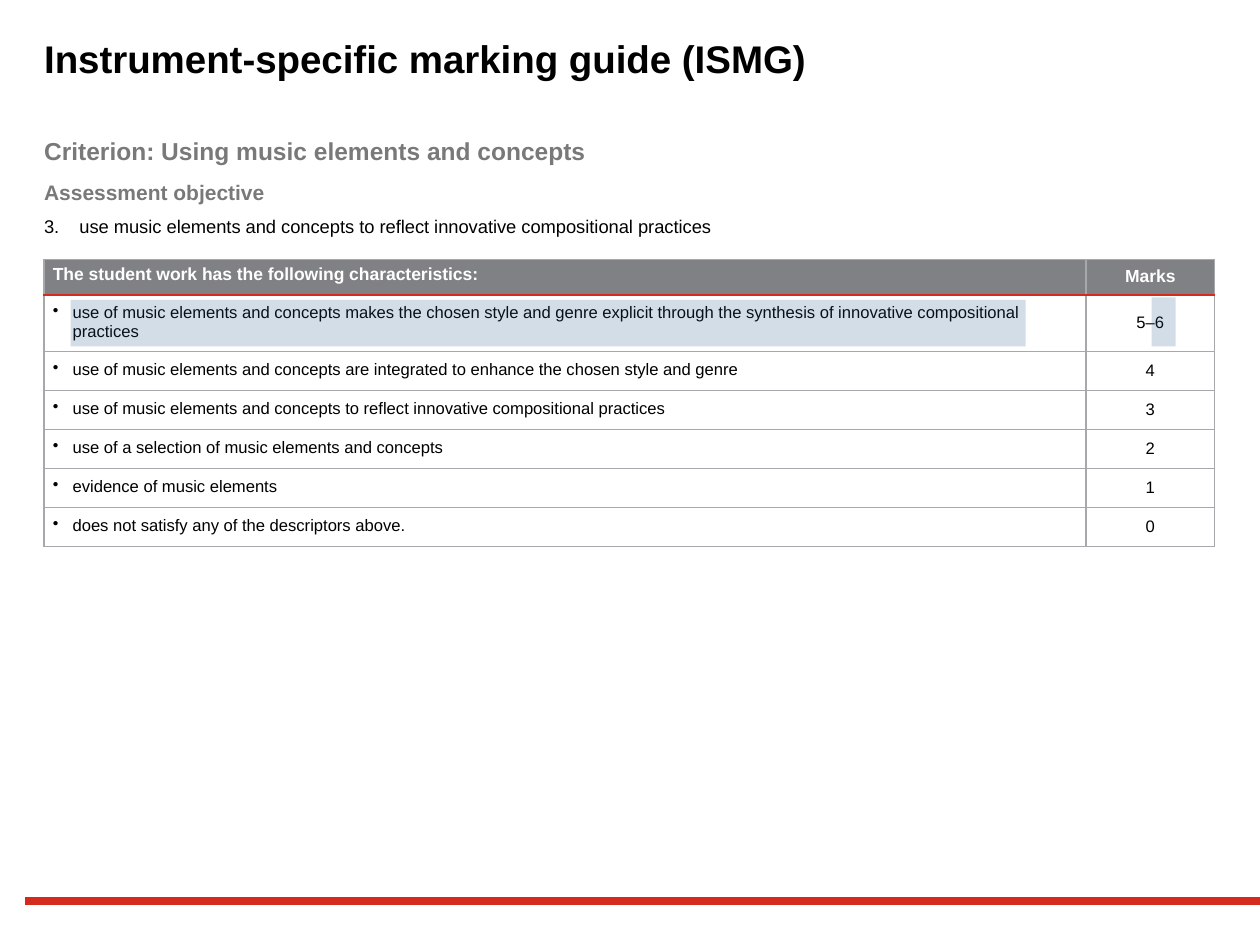
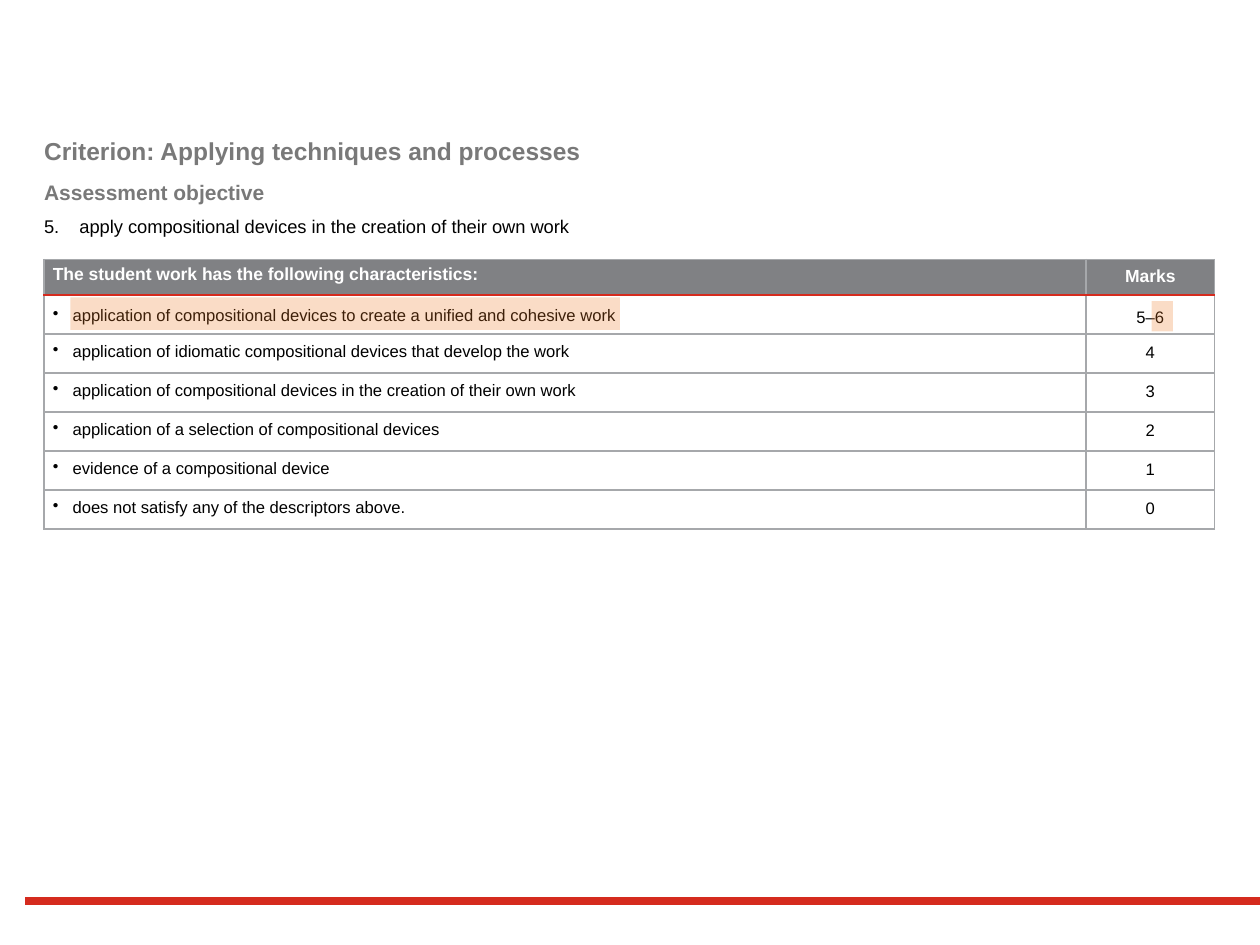
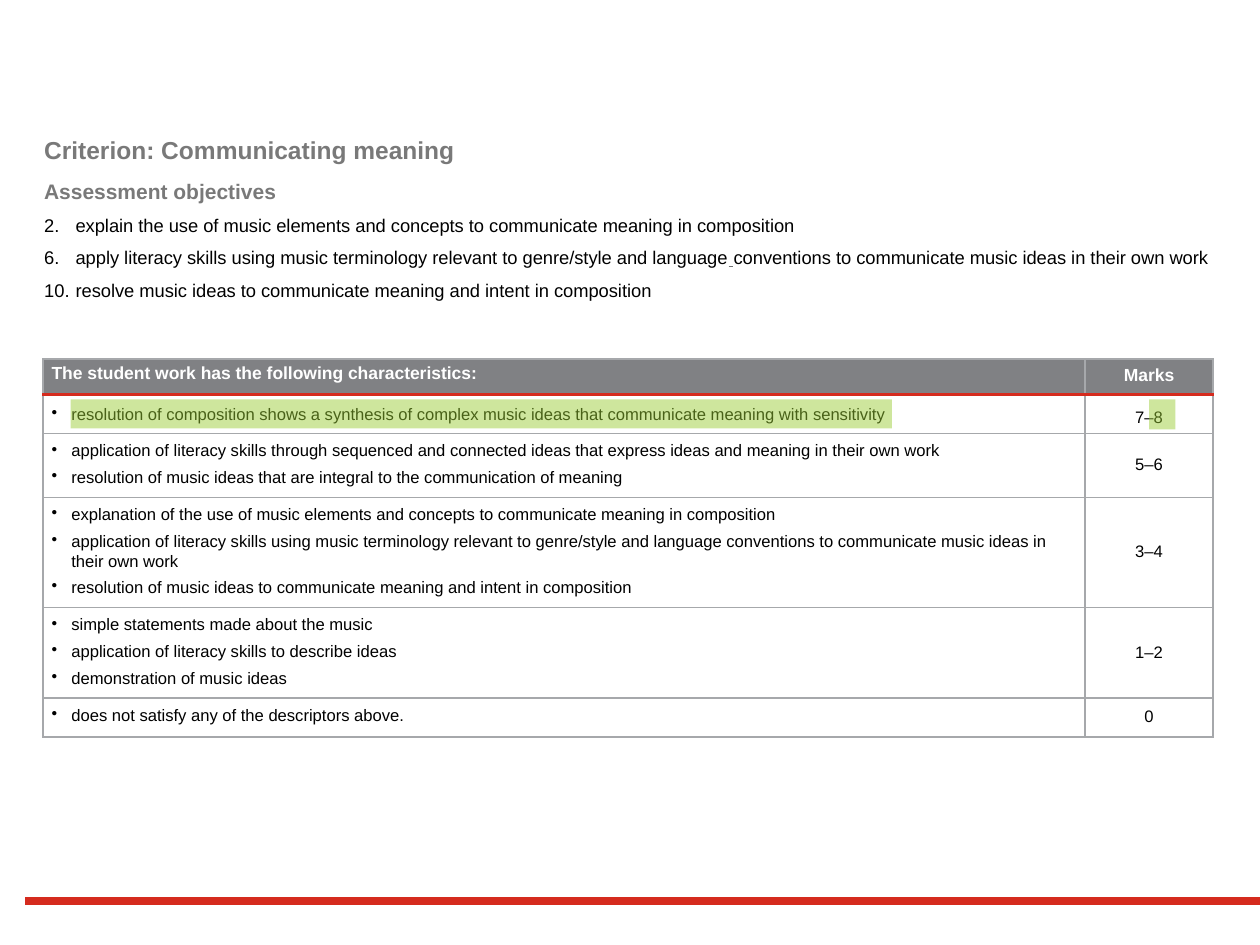
"""Build three slides of a music marking guide, one criterion per slide."""
from lxml import etree
from pptx import Presentation
from pptx import util as u
from pptx.dml import color
from pptx.enum import shapes, text
from pptx.oxml import ns

BLACK, WHITE, RED = "000000", "FFFFFF", "D52B1E"
HEADING, HEADER_FILL, BORDER = "797979", "808184", "A6A8AB"
LEFT, WIDTH = 25.2, 668.5
COLUMN_WIDTHS = (595.4, 73.4)
HEADER_HEIGHT, ROW_HEIGHT = 20.2, 22.3
HEADER_INSETS, ROW_INSETS, TIGHT_INSETS = (2.9, 4.3), (4.3, 5.8), (5.8, 2.9)
LAST_ROW = (["does not satisfy any of the descriptors above."], "0")

CRITERIA = [
    {
        "title": "Instrument-specific marking guide (ISMG)",
        "criterion": "Criterion: Using music elements and concepts",
        "heading": "Assessment objective",
        "objectives": [(None, ["3.\tuse music elements and concepts to reflect innovative compositional practices"])],
        "indent": 20.2,
        "body": (77.8, 67.7),
        "table": (25.2, 148.3),
        "first_insets": ROW_INSETS,
        "rows": [
            (["use of music elements and concepts makes the chosen style and genre explicit "
              "through the synthesis of innovative compositional practices"], "5–6"),
            (["use of music elements and concepts are integrated to enhance the chosen style and genre"], "4"),
            (["use of music elements and concepts to reflect innovative compositional practices"], "3"),
            (["use of a selection of music elements and concepts"], "2"),
            (["evidence of music elements"], "1"),
        ],
        "highlight": ("21578A", 20),
        "highlight_boxes": [(658.1, 169.9, 13.7, 28.1), (40.3, 171.4, 545.8, 26.6)],
    },
    {
        "title": None,
        "criterion": "Criterion: Applying techniques and processes",
        "heading": "Assessment objective",
        "objectives": [(None, ["5.\tapply compositional devices in the creation of their own work"])],
        "indent": 20.2,
        "body": (77.8, 107.3),
        "table": (25.2, 148.3),
        "first_insets": TIGHT_INSETS,
        "rows": [
            (["application of compositional devices to create a unified and cohesive work"], "5–6"),
            (["application of idiomatic compositional devices that develop the work"], "4"),
            (["application of compositional devices in the creation of their own work"], "3"),
            (["application of a selection of compositional devices"], "2"),
            (["evidence of a compositional device"], "1"),
        ],
        "highlight": ("ED7A23", 26),
        "highlight_boxes": [(658.1, 172.1, 12.2, 17.3), (40.3, 169.9, 313.9, 18.7)],
    },
    {
        "title": None,
        "criterion": "Criterion: Communicating meaning",
        "heading": "Assessment objectives",
        "objectives": [
            (2, ["explain the use of music elements and concepts to communicate meaning in composition"]),
            (6, ["apply literacy skills using music terminology relevant to genre/style and language", " ",
                 "conventions to communicate music ideas in their own work"]),
            (10, ["resolve music ideas to communicate meaning and intent in composition"]),
        ],
        "indent": 18,
        "body": (77, 118.8),
        "table": (24.5, 205.2),
        "first_insets": TIGHT_INSETS,
        "rows": [
            (["resolution of composition shows a synthesis of complex music ideas "
              "that communicate meaning with sensitivity"], "7–8"),
            (["application of literacy skills through sequenced and connected ideas "
              "that express ideas and meaning in their own work",
              "resolution of music ideas that are integral to the communication of meaning"], "5–6"),
            (["explanation of the use of music elements and concepts to communicate meaning in composition",
              "application of literacy skills using music terminology relevant to genre/style and language "
              "conventions to communicate music ideas in their own work",
              "resolution of music ideas to communicate meaning and intent in composition"], "3–4"),
            (["simple statements made about the music",
              "application of literacy skills to describe ideas",
              "demonstration of music ideas"], "1–2"),
        ],
        "highlight": ("99CC33", 48),
        "highlight_boxes": [(656.6, 228.2, 15.1, 17.3), (40.3, 228.2, 469.4, 16.6)],
    },
]


def rgb(value):
    """Turn a hex string into a colour."""
    return color.RGBColor.from_string(value)


def write(paragraph, words, size, hex_color=BLACK, bold=False):
    """Add one formatted run and return it."""
    run = paragraph.add_run()
    run.text = words
    run.font.name = "Arial"
    run.font.size = u.Pt(size)
    run.font.bold = bold
    run.font.color.rgb = rgb(hex_color)
    return run


presentation = Presentation()
presentation.slide_width, presentation.slide_height = u.Pt(720), u.Pt(540)
layout = presentation.slide_layouts[1]

for number, criterion in enumerate(CRITERIA):
    slide = presentation.slides.add_slide(layout)
    title, body = slide.placeholders

    if number == 0:
        footer_line = slide.shapes.add_connector(
            shapes.MSO_CONNECTOR.STRAIGHT, u.Pt(14.4), u.Pt(514.8), u.Pt(720), u.Pt(514.8))
        footer_line.line.color.rgb = rgb(RED)
        footer_line.line.width = u.Pt(4.2)
        etree.SubElement(footer_line.element.spPr, ns.qn("a:effectLst"))
        footer_line.element.nvCxnSpPr.cNvPr.id = 20
        presentation.slide_master.shapes.element.append(footer_line.element)

    row_list = criterion["rows"] + [LAST_ROW]
    table_left, table_top = criterion["table"]
    table_frame = slide.shapes.add_table(
        len(row_list) + 1, 2, u.Pt(table_left), u.Pt(table_top), u.Pt(sum(COLUMN_WIDTHS)),
        u.Pt(HEADER_HEIGHT + ROW_HEIGHT * len(row_list)))
    table = table_frame.table
    table.first_row = table.horz_banding = False
    for column, width in zip(table.columns, COLUMN_WIDTHS):
        column.width = u.Pt(width)

    header = (["The student work has the following characteristics:"], "Marks")
    for row_index, (descriptors, marks) in enumerate([header] + row_list):
        is_header = row_index == 0
        table.rows[row_index].height = u.Pt(HEADER_HEIGHT if is_header else ROW_HEIGHT)
        insets = {0: HEADER_INSETS, 1: criterion["first_insets"]}.get(row_index, ROW_INSETS)
        edges = {"L": BORDER, "R": BORDER,
                 "T": RED if row_index == 1 else BORDER, "B": RED if is_header else BORDER}

        for column_index, lines in enumerate((descriptors, [marks])):
            cell = table.cell(row_index, column_index)
            cell.margin_left = cell.margin_right = u.Pt(5)
            cell.margin_top, cell.margin_bottom = (u.Pt(inset) for inset in insets)
            cell.vertical_anchor = text.MSO_ANCHOR.MIDDLE if column_index else text.MSO_ANCHOR.TOP

            properties = cell.text_frame.paragraphs[0]._p.getparent().getparent().get_or_add_tcPr()
            for side, edge_color in edges.items():
                edge = etree.SubElement(properties, ns.qn(f"a:ln{side}"),
                                        w=str(u.Pt(1.5 if edge_color == RED else 1)))
                edge_fill = etree.SubElement(edge, ns.qn("a:solidFill"))
                etree.SubElement(edge_fill, ns.qn("a:srgbClr"), val=edge_color)
            if is_header:
                cell.fill.solid()
                cell.fill.fore_color.rgb = rgb(HEADER_FILL)
            else:
                cell.fill.background()

            for line_index, line in enumerate(lines):
                frame = cell.text_frame
                paragraph = frame.add_paragraph() if line_index else frame.paragraphs[0]
                paragraph.space_before = paragraph.space_after = u.Pt(2)
                if column_index:
                    paragraph.alignment = text.PP_ALIGN.CENTER
                if is_header:
                    write(paragraph, line, 10, WHITE, True)
                    continue
                paragraph.line_spacing = 1.1 if column_index else 1.05
                write(paragraph, line, 9.5)
                if column_index == 0:
                    layout_of_line = paragraph._p.get_or_add_pPr()
                    layout_of_line.set("marL", str(u.Pt(11.3)))
                    layout_of_line.set("indent", str(u.Pt(-11.3)))
                    etree.SubElement(layout_of_line, ns.qn("a:buChar"), char="•")

    highlight_color, opacity = criterion["highlight"]
    for box in criterion["highlight_boxes"]:
        highlight = slide.shapes.add_shape(shapes.MSO_SHAPE.RECTANGLE, *(u.Pt(length) for length in box))
        highlight.shadow.inherit = False
        highlight.line.fill.background()
        highlight.fill.solid()
        highlight.fill.fore_color.rgb = rgb(highlight_color)
        solid_color = highlight.element.spPr.find(".//" + ns.qn("a:srgbClr"))
        etree.SubElement(solid_color, ns.qn("a:alpha"), val=str(opacity * 1000))

    body_top, body_height = criterion["body"]
    for placeholder, top, height in ((title, 20.2, 34.6), (body, body_top, body_height)):
        placeholder.left, placeholder.top = u.Pt(LEFT), u.Pt(top)
        placeholder.width, placeholder.height = u.Pt(WIDTH), u.Pt(height)
        frame = placeholder.text_frame
        frame.margin_left = frame.margin_top = frame.margin_right = frame.margin_bottom = 0
        frame.vertical_anchor = text.MSO_ANCHOR.TOP
        frame.auto_size = text.MSO_AUTO_SIZE.NONE
        frame.word_wrap = True

    if criterion["title"]:
        paragraph = title.text_frame.paragraphs[0]
        paragraph.alignment = text.PP_ALIGN.LEFT
        write(paragraph, criterion["title"], 22, BLACK, True)
    else:
        title.element.getparent().remove(title.element)

    paragraph = body.text_frame.paragraphs[0]
    write(paragraph, criterion["criterion"], 14, HEADING, True)
    paragraph.space_after = u.Pt(8)
    paragraph = body.text_frame.add_paragraph()
    write(paragraph, criterion["heading"], 12, HEADING, True)
    paragraph.space_after = u.Pt(6)
    for start, runs in criterion["objectives"]:
        paragraph = body.text_frame.add_paragraph()
        paragraph.space_after = u.Pt(6)
        for words in runs:
            run = write(paragraph, words, 10.5)
            if words == " ":
                run.font.underline = True
                run.font.color.rgb = rgb("6D6F71")

    objective_starts = [None, None] + [start for start, runs in criterion["objectives"]]
    for index, (paragraph, start) in enumerate(zip(body.text_frame.paragraphs, objective_starts)):
        paragraph.space_before = u.Pt(0)
        indent = criterion["indent"] if index > 1 else 0
        list_format = paragraph._p.get_or_add_pPr()
        list_format.set("marL", str(u.Pt(indent)))
        list_format.set("indent", str(u.Pt(-indent)))
        if start:
            etree.SubElement(list_format, ns.qn("a:buAutoNum"), type="arabicPeriod", startAt=str(start))
        else:
            etree.SubElement(list_format, ns.qn("a:buNone"))

presentation.save("out.pptx")
